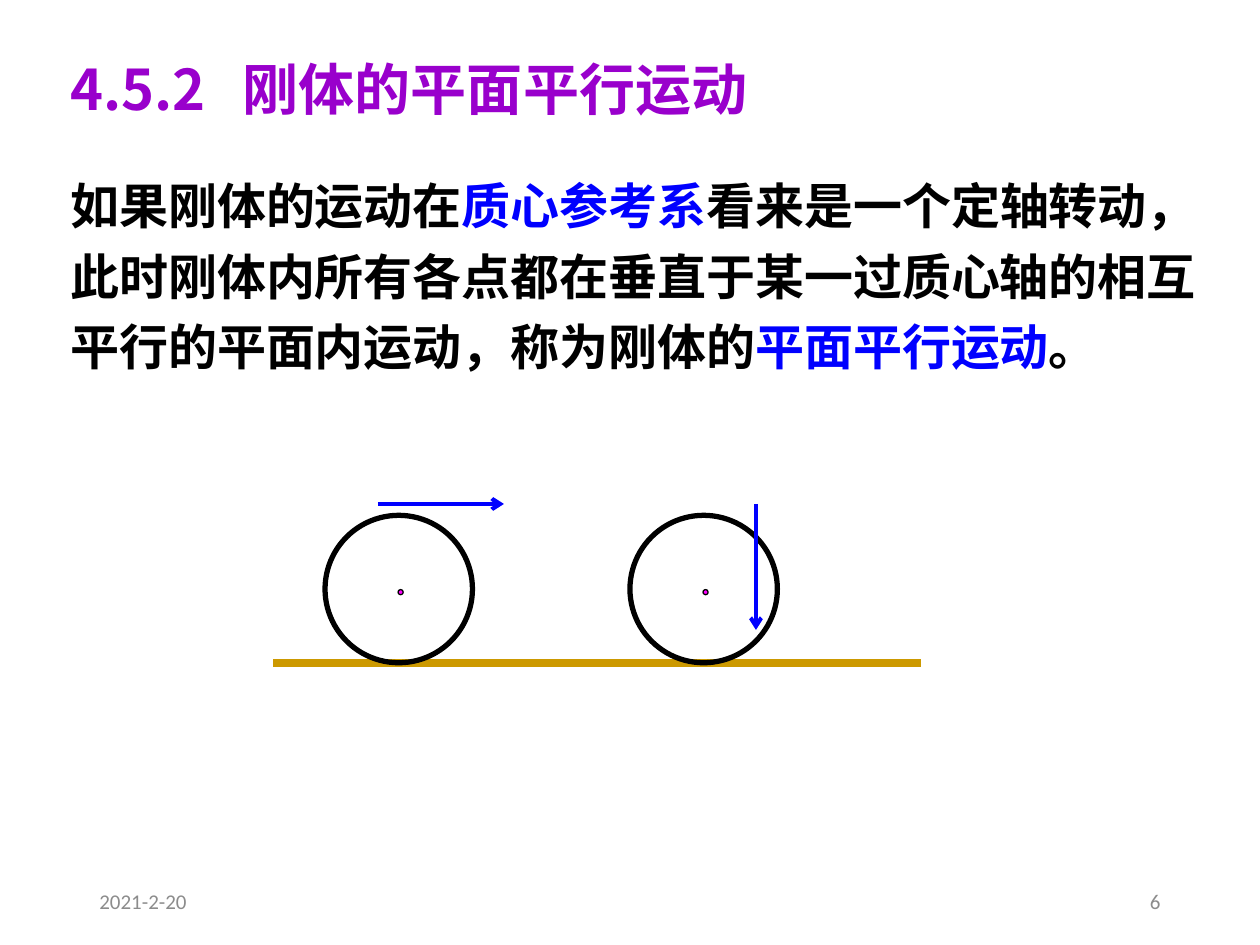
from dataclasses import dataclass
from typing import Any

from lxml import etree
from pptx import Presentation
from pptx.dml.color import RGBColor
from pptx.enum.shapes import MSO_SHAPE
from pptx.enum.text import MSO_ANCHOR, MSO_AUTO_SIZE, PP_ALIGN
from pptx.oxml.ns import qn
from pptx.util import Inches, Pt

BLACK = RGBColor(0x00, 0x00, 0x00)
BLUE = RGBColor(0x00, 0x00, 0xFF)
PURPLE = RGBColor(0x99, 0x00, 0xCC)
MAGENTA = RGBColor(0xFF, 0x00, 0xFF)
OCHRE = RGBColor(0xCC, 0x99, 0x00)
GRAY = RGBColor(0x8C, 0x8C, 0x8C)
OVAL = MSO_SHAPE.OVAL
TOP, MIDDLE = MSO_ANCHOR.TOP, MSO_ANCHOR.MIDDLE
LEFT, RIGHT = PP_ALIGN.LEFT, PP_ALIGN.RIGHT
GROW, FIXED = MSO_AUTO_SIZE.SHAPE_TO_FIT_TEXT, MSO_AUTO_SIZE.NONE
WIDTH, HEIGHT = 10, 7.5
WHEEL_SIZE, DOT_SIZE = 1.17, 0.04
WHEEL_TOP, GROUND = 4.09, 5.26


def write(para, text, font="Noto Sans CJK SC", size=28, color=BLACK, bold=True):
    """Append one formatted span of text to a paragraph."""
    span = para.add_run()
    span.text = text
    span.font.name = font
    span.font.size = Pt(size)
    span.font.bold = bold
    span.font.color.rgb = color
    east_asian = etree.SubElement(span.font._element, qn("a:ea"))
    east_asian.set("typeface", font)


@dataclass
class Board:
    """Hold the style and the current page, and draw each kind of element in inches."""

    page: Any
    text_font: str = "Noto Sans CJK SC"
    footer_font: str = "Calibri"

    def text(self, left, top, width, height, spans, anchor=TOP, align=LEFT,
             spacing=None, fit=FIXED, tab=None, **style):
        box = self.page.shapes.add_textbox(*map(Inches, (left, top, width, height)))
        frame = box.text_frame
        frame.word_wrap = True
        frame.auto_size = fit
        frame.vertical_anchor = anchor
        para = frame.paragraphs[0]
        para.alignment = align
        para.line_spacing = spacing
        if tab:
            stops = etree.SubElement(para._p.get_or_add_pPr(), qn("a:tabLst"))
            etree.SubElement(stops, qn("a:tab"), pos=str(Inches(tab)), algn="l")
        for text, color in spans:
            write(para, text, color=color, **{"font": self.text_font, **style})

    def footer(self, left, text, align):
        self.text(left, 6.95, 2.25, 0.4, [(text, GRAY)], anchor=MIDDLE, align=align,
                  font=self.footer_font, size=12, bold=False)

    def line(self, start, end, color, weight):
        points = [Inches(value) for value in (*start, *end)]
        connector = self.page.shapes.add_connector(1, *points)
        connector.line.color.rgb = color
        connector.line.width = Pt(weight)
        etree.SubElement(connector._element.spPr, qn("a:effectLst"))

    def circle(self, left, top, size, weight, fill=None):
        shape = self.page.shapes.add_shape(OVAL, *map(Inches, (left, top, size, size)))
        shape.shadow.inherit = False
        shape.line.color.rgb = BLACK
        shape.line.width = Pt(weight)
        if fill is None:
            shape.fill.background()
        else:
            shape.fill.solid()
            shape.fill.fore_color.rgb = fill

    def wheel(self, left):
        self.circle(left, WHEEL_TOP, WHEEL_SIZE, 3)
        self.circle(left + 0.58, WHEEL_TOP + 0.59, DOT_SIZE, 0.75, MAGENTA)

    def curved_arrow(self, start, *controls):
        builder = self.page.shapes.build_freeform(*start, scale=Inches(1))
        builder.add_line_segments(controls, close=False)
        arrow = builder.convert_to_shape()
        arrow.shadow.inherit = False
        arrow.fill.background()
        arrow.line.color.rgb = BLUE
        arrow.line.width = Pt(2.25)
        etree.SubElement(arrow.line._get_or_add_ln(), qn("a:tailEnd"), type="arrow")
        segments = list(arrow._element.iter(qn("a:lnTo")))
        for first, second, third in zip(*[iter(segments)] * 3):
            first.tag = qn("a:cubicBezTo")
            for segment in (second, third):
                first.append(segment[0])
                segment.getparent().remove(segment)


def main():
    deck = Presentation()
    deck.slide_width, deck.slide_height = Inches(WIDTH), Inches(HEIGHT)
    board = Board(deck.slides.add_slide(deck.slide_layouts[6]))

    board.footer(0.69, "2021-2-20", LEFT)
    board.footer(7.06, "6", RIGHT)
    board.text(0.46, 0.38, 6.5, 0.63, [("4.5.2\t刚体的平面平行运动", PURPLE)],
               size=32, tab=1.37)
    board.text(0.46, 1.25, 9.21, 1.77, [
        ("如果刚体的运动在", BLACK),
        ("质心参考系", BLUE),
        ("看来是一个定轴转动，此时刚体内所有各点都在垂直于某一过质心轴的相互平行的平面内运动，称为刚体的", BLACK),
        ("平面平行运动", BLUE),
        ("。", BLACK),
    ], spacing=1.2, fit=GROW)

    board.line((2.17, GROUND), (7.31, GROUND), OCHRE, 4.5)
    for left in (2.58, 5):
        board.wheel(left)
    board.curved_arrow((2.85, 4.04), (2.91, 4.02), (3.11, 3.91), (3.24, 3.92),
                       (3.36, 3.93), (3.54, 4.07), (3.62, 4.1))
    board.curved_arrow((6.3, 4.34), (6.31, 4.39), (6.39, 4.56), (6.39, 4.66),
                       (6.38, 4.75), (6.28, 4.88), (6.25, 4.94))
    deck.save("out.pptx")


if __name__ == "__main__":
    main()
